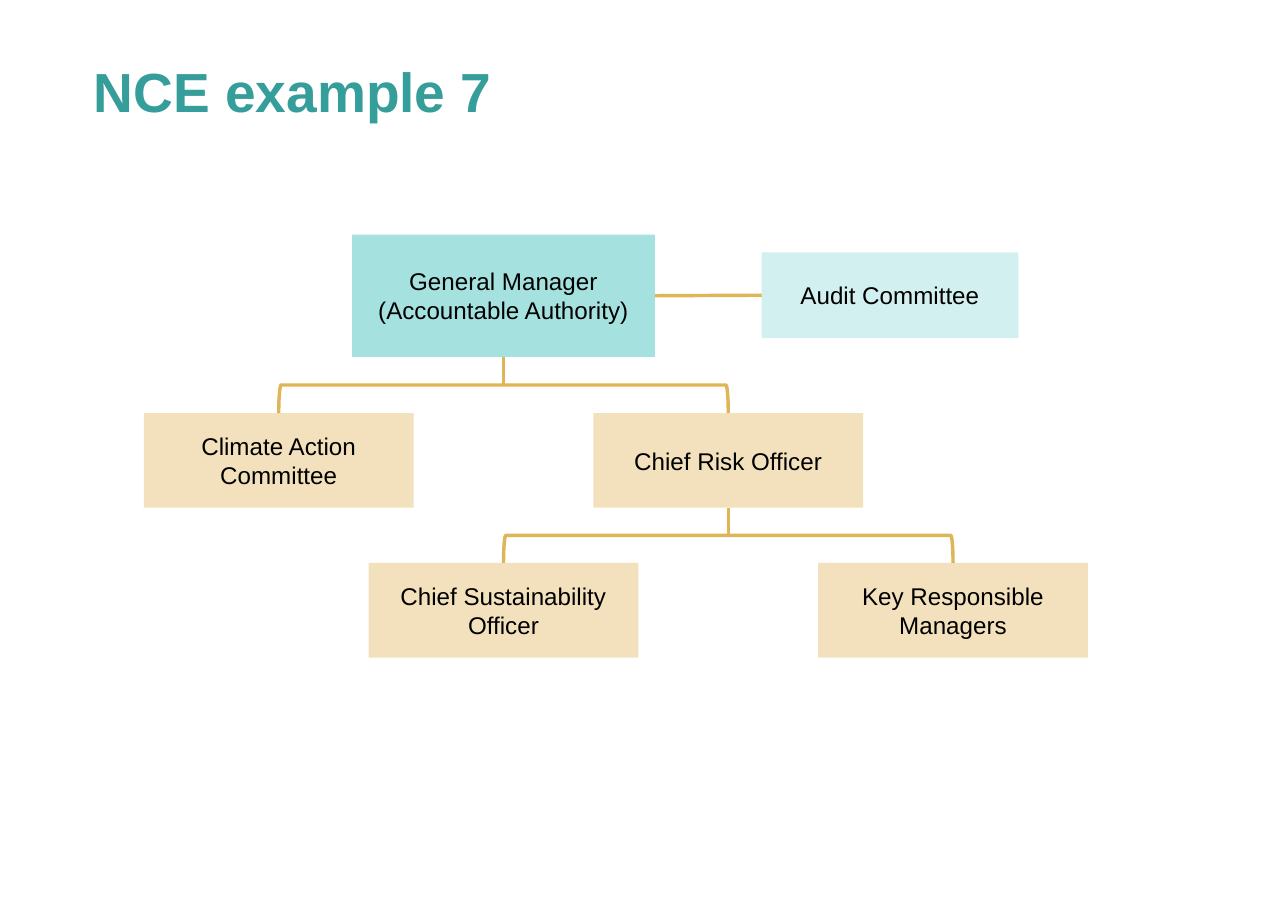
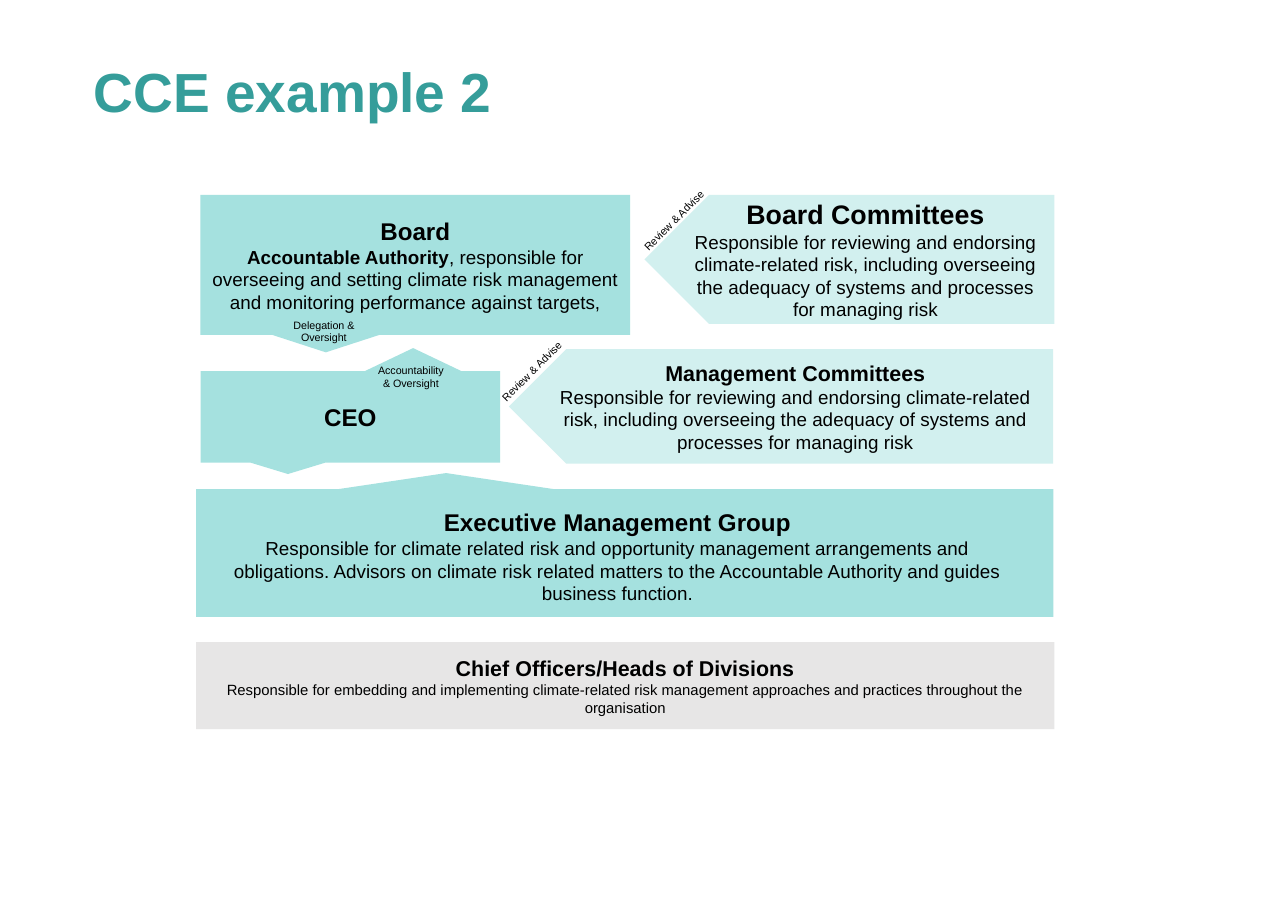
"""Build two governance structure slides: a reporting tree and a layered board model."""
from lxml import etree
from pptx import Presentation
from pptx.dml.color import RGBColor
from pptx.enum.shapes import MSO_CONNECTOR, MSO_SHAPE
from pptx.enum.text import MSO_ANCHOR, PP_ALIGN
from pptx.oxml.ns import qn
from pptx.util import Inches, Pt

RECT, CALLOUT, PENTAGON = MSO_SHAPE.RECTANGLE, MSO_SHAPE.RECTANGULAR_CALLOUT, MSO_SHAPE.PENTAGON
TRIANGLE, BRACKET = MSO_SHAPE.ISOSCELES_TRIANGLE, MSO_SHAPE.RIGHT_BRACKET
STRAIGHT = MSO_CONNECTOR.STRAIGHT
TOP, MIDDLE = MSO_ANCHOR.TOP, MSO_ANCHOR.MIDDLE
LEFT, CENTER = PP_ALIGN.LEFT, PP_ALIGN.CENTER
LEFT_SIDE, BOTTOM_SIDE, RIGHT_SIDE = 1, 2, 3

TITLE_TEAL = RGBColor(0x35, 0x9D, 0x9A)
TEAL = RGBColor(0xA5, 0xE1, 0xDF)
PALE_TEAL = RGBColor(0xD2, 0xF0, 0xEF)
SAND = RGBColor(0xF2, 0xE1, 0xBC)
GOLD = RGBColor(0xDF, 0xB5, 0x58)
GREY = RGBColor(0xE7, 0xE6, 0xE6)
BLACK = RGBColor(0, 0, 0)

FONT = "Arial"
SLIDE_SIZE = (11.69, 8.27)
TITLE_AT = (0.85, 0.59, 10.28, 0.69)
WIDE_INSETS = (0.1, 0.05)
INSETS = (0.09, 0.04)
LINE_WIDTH = 2.25
HEAD, BODY, SMALL, NOTE = 15.8, 12.3, 9.7, 7

COLUMN_START, COLUMN_PITCH = 2.53, 2.04
TREE_NODES = {
    "manager": (["General Manager", "(Accountable Authority)"], 1, 2.13, 2.75, 1.11, TEAL),
    "climate": (["Climate Action Committee"], 0, 3.75, 2.45, 0.86, SAND),
    "audit": (["Audit Committee"], 2.72, 2.29, 2.33, 0.78, PALE_TEAL),
    "risk": (["Chief Risk Officer"], 2, 3.75, 2.45, 0.86, SAND),
    "sustainability": (["Chief Sustainability Officer"], 1, 5.11, 2.45, 0.86, SAND),
    "managers": (["Key Responsible Managers"], 3, 5.11, 2.45, 0.86, SAND),
}
BRANCHES = [("manager", "climate", "risk"), ("risk", "sustainability", "managers")]

REVIEW_DUTY = ("Responsible for reviewing and endorsing climate-related risk, including "
               "overseeing the adequacy of systems and processes for managing risk")
EXECUTIVE_DUTY = ("Responsible for climate related risk and opportunity management arrangements "
                  "and obligations. Advisors on climate risk related matters to the Accountable "
                  "Authority and guides business function.")
OFFICER_DUTY = ("Responsible for embedding and implementing climate-related risk management "
                "approaches and practices throughout the organisation")
BOARD_DUTY = (", responsible for overseeing and setting climate risk management and monitoring "
              "performance against targets,")


def section(heading, size, duty, duty_size=BODY):
    return [[(heading, size, True)], [(duty, duty_size, False)]]


def note(text):
    return [[(text, NOTE, False)]]


LAYERS = [
    {"at": (1.82, 1.77, 3.9, 1.27), "kind": CALLOUT, "fill": TEAL, "text": [
        [("Board", HEAD, True)],
        [("Accountable Authority", BODY, True), (BOARD_DUTY, BODY, False)]]},
    {"at": (1.82, 3.37, 2.72, 0.83), "kind": CALLOUT, "fill": TEAL,
     "text": [[("CEO", HEAD, True)]]},
    {"at": (1.78, 5.83, 7.79, 0.79), "fill": GREY,
     "text": section("Chief Officers/Heads of Divisions", 14, OFFICER_DUTY, SMALL)},
    {"at": (5.85, 1.77, 3.72, 1.17), "kind": PENTAGON, "fill": PALE_TEAL, "flip": "flipH",
     "text": section("Board Committees", 17.5, REVIEW_DUTY)},
    {"at": (1.78, 4.44, 7.78, 1.16), "kind": CALLOUT, "fill": TEAL, "flip": "flipV"},
    {"at": (3.31, 3.16, 0.88, 0.21), "kind": TRIANGLE, "fill": TEAL},
    {"at": (2.42, 2.85, 1.04, 0.32), "text": note("Delegation & Oversight"), "anchor": TOP},
    {"at": (3.31, 3.26, 0.84, 0.32), "text": note("Accountability & Oversight"), "anchor": TOP},
    {"at": (4.62, 3.17, 4.94, 1.04), "kind": PENTAGON, "fill": PALE_TEAL, "flip": "flipH",
     "text": section("Management Committees", 14, REVIEW_DUTY)},
    {"at": (4.2, 3.27, 1.26, 0.21), "text": note("Review & Advise"), "anchor": TOP, "turn": 315},
    {"at": (5.49, 1.9, 1.26, 0.21), "text": note("Review & Advise"), "anchor": TOP, "turn": 315},
    {"at": (1.89, 4.57, 7.43, 0.97), "fill": TEAL, "anchor": TOP,
     "text": section("Executive Management Group", HEAD, EXECUTIVE_DUTY)},
]


def write(box, paragraphs, anchor=MIDDLE, align=CENTER, color=BLACK, insets=INSETS, spacing=None):
    frame = box.text_frame
    side, edge = (Inches(inset) for inset in insets)
    settings = {"word_wrap": True, "vertical_anchor": anchor, "margin_left": side,
                "margin_right": side, "margin_top": edge, "margin_bottom": edge}
    for name, value in settings.items():
        setattr(frame, name, value)
    for index, spans in enumerate(paragraphs):
        para = frame.add_paragraph() if index else frame.paragraphs[0]
        para.alignment = align
        if spacing:
            para.line_spacing = spacing
        for text, size, bold in spans:
            span = para.add_run()
            span.text = text
            for name, value in {"name": FONT, "size": Pt(size), "bold": bold}.items():
                setattr(span.font, name, value)
            span.font.color.rgb = color


def add_panel(page, at, kind=RECT, fill=None, text=(), flip=None, turn=0, **text_format):
    lengths = [Inches(length) for length in at]
    if fill is None and kind == RECT:
        box = page.shapes.add_textbox(*lengths)
    else:
        box = page.shapes.add_shape(kind, *lengths)
        box.shadow.inherit = False
        box.line.fill.background()
        if fill is None:
            box.fill.background()
        else:
            box.fill.solid()
            box.fill.fore_color.rgb = fill
    box.rotation = turn
    if flip:
        box.element.spPr.find(qn("a:xfrm")).set(flip, "1")
    if text:
        write(box, text, **text_format)
    return box


def gold_line(item):
    item.line.color.rgb = GOLD
    item.line.width = Pt(LINE_WIDTH)


def add_link(page, start, start_side, end=None, end_side=None, end_point=(0, 0)):
    link = page.shapes.add_connector(STRAIGHT, 0, 0, *end_point)
    link.begin_connect(start, start_side)
    if end is not None:
        link.end_connect(end, end_side)
    etree.SubElement(link.element.spPr, qn("a:effectLst"))
    gold_line(link)


def add_branch(page, parent, first, last):
    middle = parent.left + parent.width // 2
    bottom = parent.top + parent.height
    drop = (first.top - bottom) // 2
    reach = last.left - first.left
    center = first.left + (first.width + reach) // 2
    add_link(page, parent, BOTTOM_SIDE, end_point=(middle, bottom + drop))
    at = (center - drop // 2, bottom + drop + (drop - reach) // 2, drop, reach)
    bracket = add_panel(page, [length / Inches(1) for length in at], BRACKET, turn=270)
    gold_line(bracket)


def add_page(deck, title):
    page = deck.slides.add_slide(deck.slide_layouts[6])
    add_panel(page, TITLE_AT, text=[[(title, 36, True)]], anchor=TOP, align=LEFT,
              color=TITLE_TEAL, insets=(0, 0), spacing=0.9)
    return page


def build_tree(deck):
    page = add_page(deck, "NCE example 7")
    boxes = {}
    for name, (lines, column, top, width, height, fill) in TREE_NODES.items():
        left = COLUMN_START + column * COLUMN_PITCH - width / 2
        boxes[name] = add_panel(page, (left, top, width, height), fill=fill, insets=WIDE_INSETS,
                                text=[[(line, HEAD, False)] for line in lines])
    add_link(page, boxes["audit"], LEFT_SIDE, boxes["manager"], RIGHT_SIDE)
    for family in BRANCHES:
        add_branch(page, *(boxes[name] for name in family))


def build_layers(deck):
    page = add_page(deck, "CCE example 2")
    for layer in LAYERS:
        add_panel(page, **layer)


def main():
    deck = Presentation()
    deck.slide_width, deck.slide_height = (Inches(length) for length in SLIDE_SIZE)
    build_tree(deck)
    build_layers(deck)
    deck.save("out.pptx")


if __name__ == "__main__":
    main()
